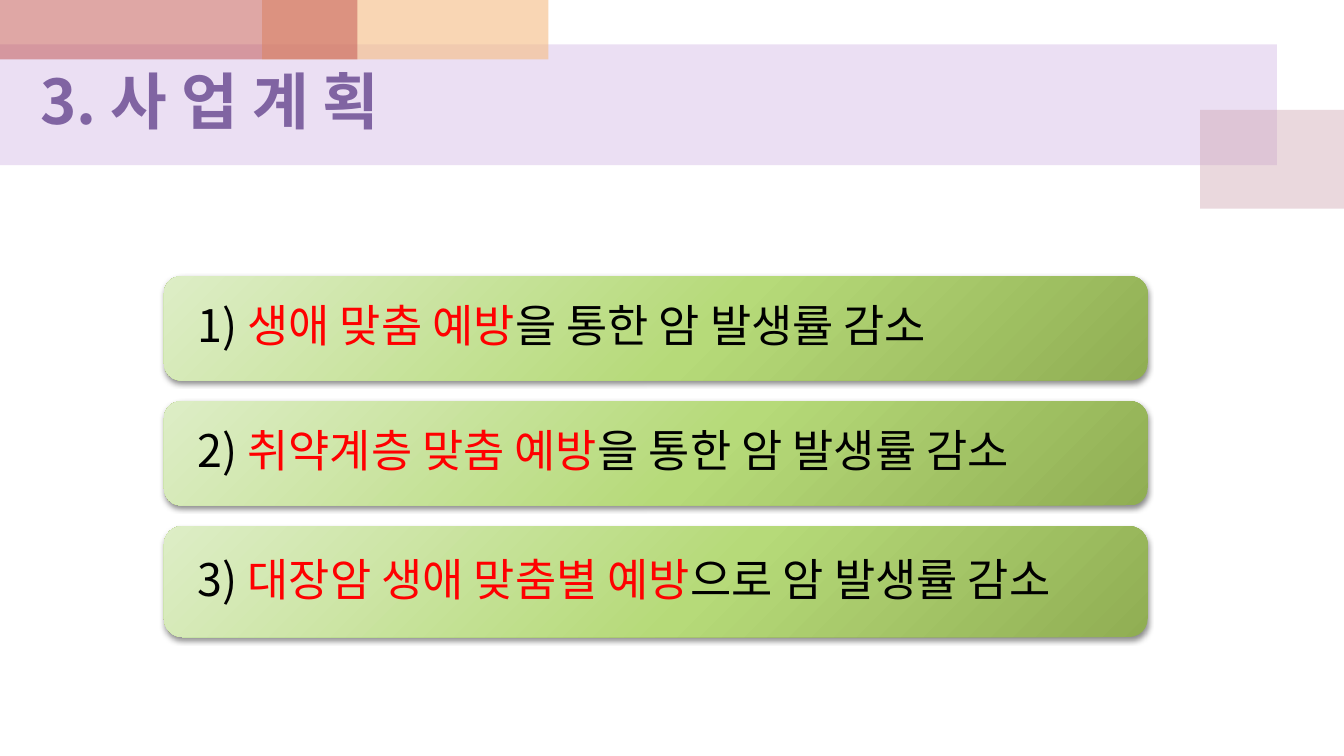
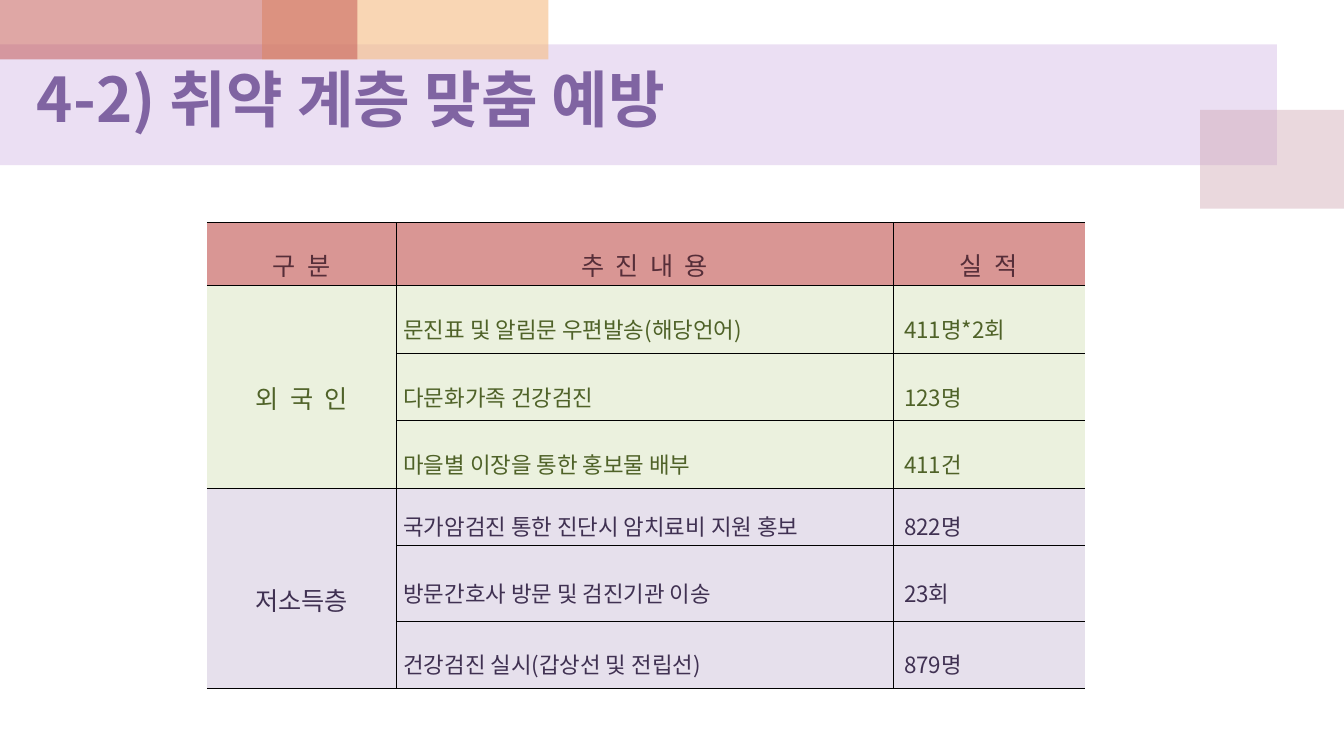
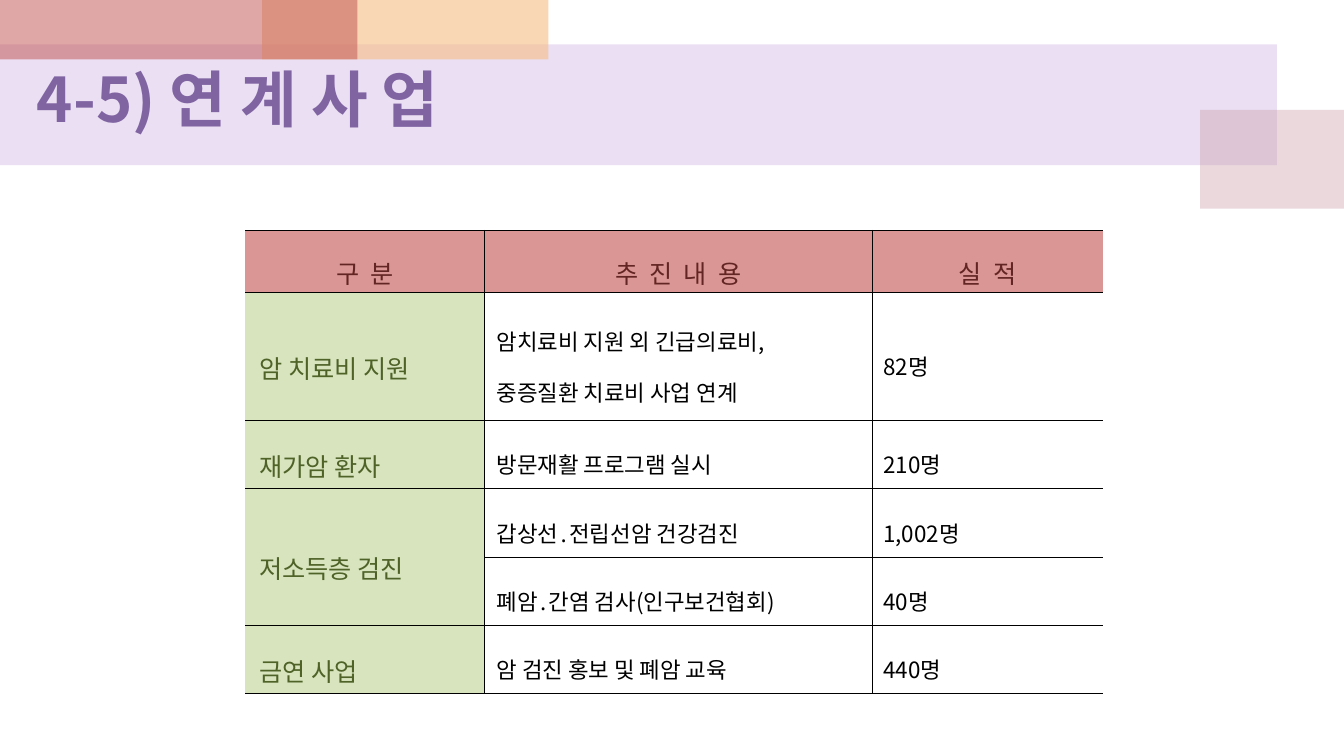
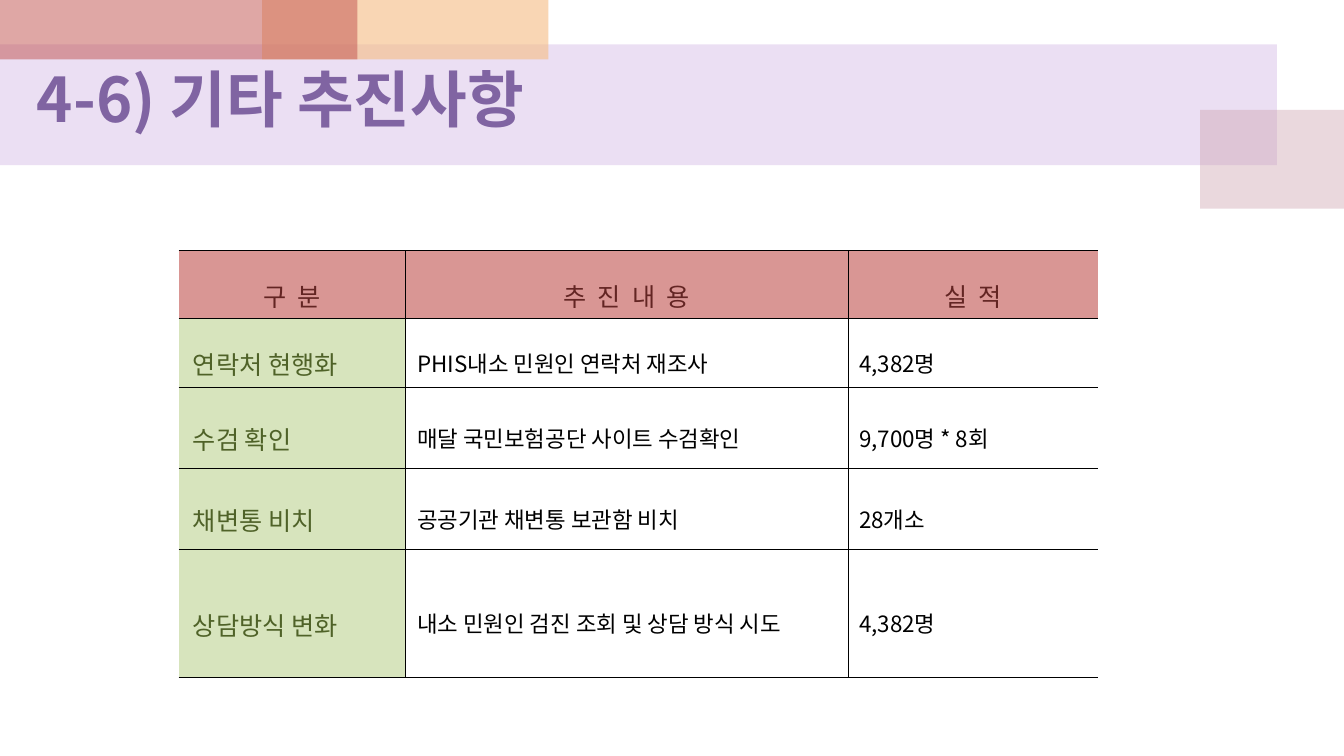
from collections import namedtuple
from itertools import accumulate
from lxml.etree import SubElement
from pptx import Presentation
from pptx.dml.color import RGBColor
from pptx.enum.shapes import MSO_SHAPE
from pptx.enum.text import MSO_ANCHOR, PP_ALIGN
from pptx.oxml import parse_xml
from pptx.oxml.ns import nsdecls, qn
from pptx.util import Inches, Pt

WIDE, HIGH = Inches(13.333), Inches(7.5)
FONT = "Noto Sans CJK KR"
BLACK, RED, PURPLE, MOSS = "000000", "FF0000", "8064A2", "4F6228"
ROSE, WINE, PLUM = "D99694", "632523", "562E39"
BANDS = [
    ((0, 5.87, 95, 16), "BF98D8", 30),
    ((89.3, 14.53, 10.7, 13.07), "CC9EAC", 40),
    ((19.5, 0, 21.3, 7.87), "F5BC83", 60),
    ((0, 0, 26.6, 7.87), "C0504D", 50),
]
STOPS = [(0, "DDEDC6"), (55, "B6DA79"), (100, "90AE53")]
HEAD = ["구 분", "추 진 내 용", "실 적"]
TITLE = (2, 7.73, 67.5, 10.4)

Look = namedtuple("Look", "align label_fill label_ink fill ink pads")
GREEN = Look(PP_ALIGN.CENTER, "EBF1DE", MOSS, "EBF1DE", MOSS, (0.02, 0.07, 0.11))
LILAC = Look(PP_ALIGN.CENTER, "E6E0EC", "403152", "E6E0EC", "403152", (0.02, 0.07, 0.11))
PLAIN = Look(PP_ALIGN.LEFT, "D7E4BD", MOSS, None, BLACK, (0.14, 0.12, 0.11))


def color(code):
    """Turn a hex string into a colour."""
    return RGBColor.from_string(code)


def across(share):
    """Give a percentage of the slide's width."""
    return round(WIDE * share / 100)


def down(share):
    """Give a percentage of the slide's height."""
    return round(HIGH * share / 100)


def place(at):
    """Turn percentages into left, top, width and height."""
    x, y, w, h = at
    return across(x), down(y), across(w), down(h)


def write(para, text, size, ink, bold=False, gap=0):
    """Add one run of text to a paragraph."""
    run = para.add_run()
    run.text = text
    font = run.font
    font.size, font.bold, font.name = Pt(size), bold, FONT
    font.color.rgb = color(ink)
    props = run._r.get_or_add_rPr()
    SubElement(props, qn("a:ea")).set("typeface", FONT)
    if gap:
        props.set("spc", str(gap * 100))


def band(slide, at, fill, alpha):
    """Draw a translucent rectangle and return it."""
    shape = slide.shapes.add_shape(MSO_SHAPE.RECTANGLE, *place(at))
    shape.shadow.inherit = False
    shape.line.fill.background()
    shape.fill.solid()
    shape.fill.fore_color.rgb = color(fill)
    tint = shape.element.spPr.find(".//" + qn("a:srgbClr"))
    SubElement(tint, qn("a:alpha")).set("val", str(alpha * 1000))
    return shape


def dress(layout, slide):
    """Move the shared bands into the layout."""
    for i, parts in enumerate(BANDS):
        layout.shapes.element.insert(2 + i, band(slide, *parts).element)


def head(slide, text, at=TITLE):
    """Place and fill the title."""
    title = slide.shapes.title
    title.left, title.top, title.width, title.height = place(at)
    frame = title.text_frame
    frame.vertical_anchor = MSO_ANCHOR.MIDDLE
    frame.word_wrap = True
    para = frame.paragraphs[0]
    para.alignment = PP_ALIGN.LEFT
    write(para, text, 44, PURPLE, bold=True)


def bar(slide, at, parts):
    """Draw a rounded gradient bar with its text."""
    shape = slide.shapes.add_shape(MSO_SHAPE.ROUNDED_RECTANGLE, *place(at))
    shape.line.fill.background()
    stops = "".join(
        f'<a:gs pos="{pos * 1000}"><a:srgbClr val="{code}"/></a:gs>' for pos, code in STOPS
    )
    props = shape.element.spPr
    props.insert(2, parse_xml(
        f'<a:gradFill {nsdecls("a")} rotWithShape="1"><a:gsLst>{stops}</a:gsLst>'
        '<a:path path="circle"><a:fillToRect l="-40000" t="-90000" r="140000" b="190000"/>'
        '</a:path></a:gradFill>'
    ))
    props.append(parse_xml(
        f'<a:effectLst {nsdecls("a")}><a:outerShdw blurRad="{Pt(4)}" dist="{Pt(2)}" '
        'dir="5400000" rotWithShape="0"><a:srgbClr val="000000"><a:alpha val="45000"/>'
        '</a:srgbClr></a:outerShdw></a:effectLst>'
    ))
    frame = shape.text_frame
    frame.word_wrap = True
    frame.vertical_anchor = MSO_ANCHOR.MIDDLE
    frame.margin_left = Inches(0.28)
    para = frame.paragraphs[0]
    para.alignment = PP_ALIGN.LEFT
    para.line_spacing = 0.9
    for text, ink in zip(parts, (BLACK, RED, BLACK)):
        write(para, text, 32, ink)


def rule(cell, sides):
    """Line the named sides of a cell and clear the others."""
    props = cell._tc.get_or_add_tcPr()
    for i, side in enumerate("LRTB"):
        paint = '<a:solidFill><a:srgbClr val="000000"/></a:solidFill>'
        if side not in sides:
            paint = "<a:noFill/>"
        props.insert(i, parse_xml(
            f'<a:ln{side} {nsdecls("a")} w="{Pt(0.28)}">{paint}</a:ln{side}>'
        ))


def fill(cell, text, size, ink, back, align, pad=0.02, gap=0):
    """Write and colour one table cell."""
    cell.margin_left = Inches(pad)
    cell.margin_right = cell.margin_top = cell.margin_bottom = Inches(0.02)
    cell.vertical_anchor = MSO_ANCHOR.MIDDLE
    frame = cell.text_frame
    for i, line in enumerate(text.split("\n")):
        para = frame.add_paragraph() if i else frame.paragraphs[0]
        para.alignment = align
        para.line_spacing = 1.6
        write(para, line, size, ink, gap=gap)
    if back:
        cell.fill.solid()
        cell.fill.fore_color.rgb = color(back)
    else:
        cell.fill.background()


def grid(slide, spot, cols, rows, ink, groups):
    """Build a table of labelled groups of lines."""
    at = (*spot, sum(cols), sum(rows))
    table = slide.shapes.add_table(len(rows), len(cols), *place(at)).table
    table.first_row = table.horz_banding = False
    for col, share in zip(table.columns, cols):
        col.width = across(share)
    for row, share in zip(table.rows, rows):
        row.height = down(share)
    for i, text in enumerate(HEAD):
        fill(table.cell(0, i), text, 18, ink, ROSE, PP_ALIGN.CENTER, gap=2)
    starts = accumulate((len(lines) for _, _, lines in groups), initial=1)
    for top, (name, look, lines) in zip(starts, groups):
        label = table.cell(top, 0)
        if len(lines) > 1:
            label.merge(table.cell(top + len(lines) - 1, 0))
        gap = 2 if name == "외 국 인" else 0
        fill(label, name, 18, look.label_ink, look.label_fill, look.align, look.pads[0], gap)
        for r, line in enumerate(lines, top):
            for c, text in enumerate(line, 1):
                fill(table.cell(r, c), text, 16, look.ink, look.fill, PP_ALIGN.LEFT, look.pads[c])
    for r in range(len(rows)):
        for c, sides in enumerate(("RTB", "LRTB", "LTB")):
            rule(table.cell(r, c), sides)


def plan(slide):
    """Fill the slide of plans."""
    head(slide, "3. 사 업 계 획", (2.25, 8, 56.1, 10.4))
    bars = [
        ("1) ", "생애 맞춤 예방", "을 통한 암 발생률 감소"),
        ("2) ", "취약계층 맞춤 예방", "을 통한 암 발생률 감소"),
        ("3) ", "대장암 생애 맞춤별 예방", "으로 암 발생률 감소"),
    ]
    for i, (parts, tall) in enumerate(zip(bars, (13.8, 13.8, 14.67))):
        bar(slide, (12.2, 36.53 + 16.53 * i, 73.2, tall), parts)


def care(slide):
    """Fill the slide on vulnerable groups."""
    head(slide, "4-2) 취약 계층 맞춤 예방")
    rows = [8.33, 8.93, 8.93, 8.93, 7.53, 10.05, 8.93]
    grid(slide, (15.4, 29.43), [14.1, 36.95, 14.25], rows, PLUM, [
        ("외 국 인", GREEN, [
            ("문진표 및 알림문 우편발송(해당언어)", "411명*2회"),
            ("다문화가족 건강검진", "123명"),
            ("마을별 이장을 통한 홍보물 배부", "411건"),
        ]),
        ("저소득층", LILAC, [
            ("국가암검진 통한 진단시 암치료비 지원 홍보", "822명"),
            ("방문간호사 방문 및 검진기관 이송", "23회"),
            ("건강검진 실시(갑상선 및 전립선)", "879명"),
        ]),
    ])


def link(slide):
    """Fill the slide on linked projects."""
    head(slide, "4-5) 연 계 사 업")
    rows = [8.15, 16.93] + [9.03] * 4
    grid(slide, (18.25, 30.43), [17.8, 28.85, 17.15], rows, WINE, [
        ("암 치료비 지원", PLAIN, [("암치료비 지원 외 긴급의료비,\n중증질환 치료비 사업 연계", "82명")]),
        ("재가암 환자", PLAIN, [("방문재활 프로그램 실시", "210명")]),
        ("저소득층 검진", PLAIN, [
            ("갑상선․전립선암 건강검진", "1,002명"),
            ("폐암․간염 검사(인구보건협회)", "40명"),
        ]),
        ("금연 사업", PLAIN, [("암 검진 홍보 및 폐암 교육", "440명")]),
    ])


def other(slide):
    """Fill the slide on other matters."""
    head(slide, "4-6) 기타 추진사항")
    rows = [9.03, 9.03, 10.8, 10.7, 16.93]
    grid(slide, (13.3, 33.1), [16.85, 32.95, 18.6], rows, WINE, [
        ("연락처 현행화", PLAIN, [("PHIS내소 민원인 연락처 재조사", "4,382명")]),
        ("수검 확인", PLAIN, [("매달 국민보험공단 사이트 수검확인", "9,700명 * 8회")]),
        ("채변통 비치", PLAIN, [("공공기관 채변통 보관함 비치", "28개소")]),
        ("상담방식 변화", PLAIN, [("내소 민원인 검진 조회 및 상담 방식 시도", "4,382명")]),
    ])


def main():
    """Build and save the deck."""
    deck = Presentation()
    deck.slide_width, deck.slide_height = WIDE, HIGH
    layout = deck.slide_layouts[5]
    slides = [deck.slides.add_slide(layout) for _ in range(4)]
    dress(layout, slides[0])
    for make, slide in zip((plan, care, link, other), slides):
        make(slide)
    deck.save("out.pptx")


if __name__ == "__main__":
    main()
